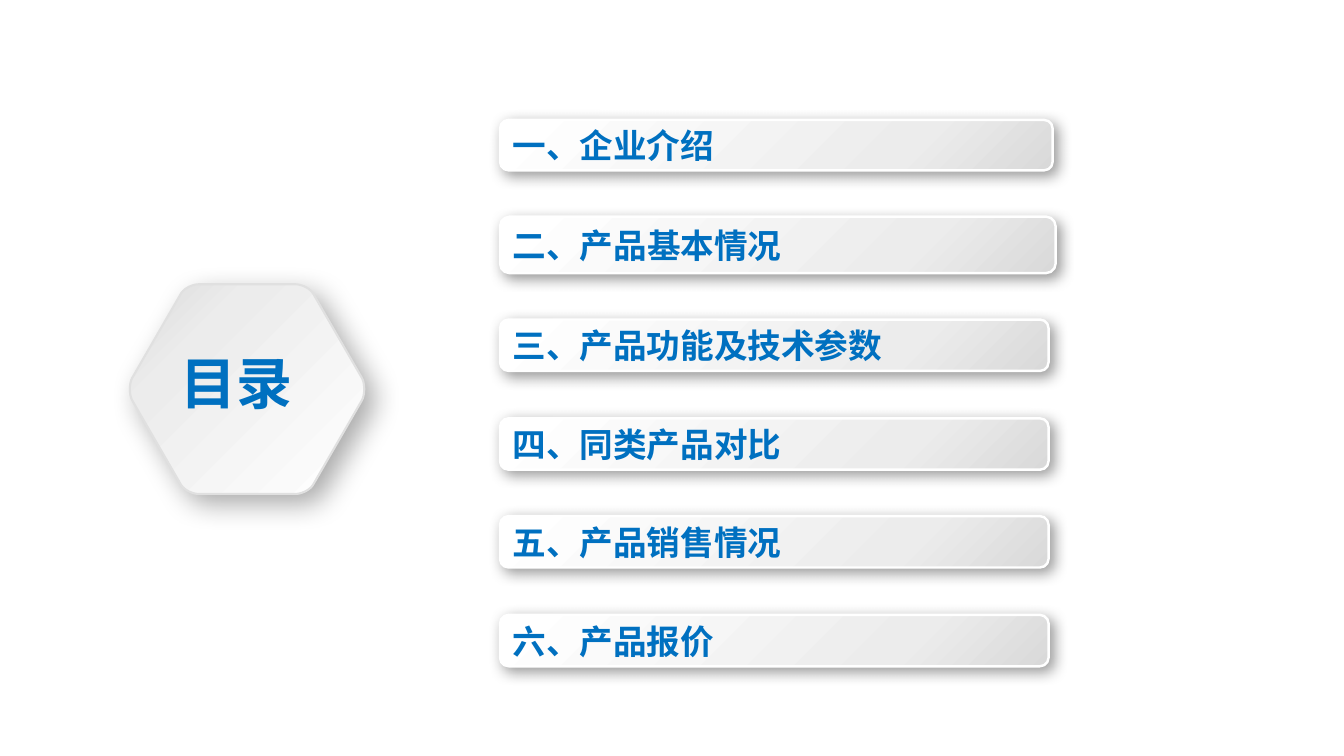
from dataclasses import dataclass

import lxml.etree
import pptx
import pptx.dml.color
import pptx.enum.shapes
import pptx.enum.text
import pptx.oxml
import pptx.oxml.ns
import pptx.util
from copy import deepcopy
from pptx.util import Inches

COLORS = {
    "blue": "0070C0",
    "white": "FFFFFF",
    "light": "ECECEC",
    "grey": "D9D9D9",
    "edge": "E0E0E0",
    "shadow": "000000",
}
FONT = "Noto Sans CJK SC"
BAR_LEFT = 4.96
HEXAGON_CENTER = (2.45, 3.86)
TOP_CORNER = [(0.48, -1.04), (0.54, -1.04), (0.63, -1.0), (0.66, -0.94)]
SIDE_CORNER = [(1.14, -0.11), (1.17, -0.05), (1.17, 0.05), (1.14, 0.11)]
CURVE_STEPS = 10

Point = tuple[float, float]


@dataclass
class Bar:
    text: str
    top: float
    width: float = 5.44
    height: float = 0.51


@dataclass
class Shadow:
    blur: float
    distance: float
    opacity: int


BARS = [
    Bar("一、企业介绍", 1.19, 5.48, 0.5),
    Bar("二、产品基本情况", 2.15, 5.51, 0.56),
    Bar("三、产品功能及技术参数", 3.17),
    Bar("四、同类产品对比", 4.15),
    Bar("五、产品销售情况", 5.12),
    Bar("六、产品报价", 6.1),
]
BAR_SHADOW = Shadow(10, 4, 40)
HEXAGON_SHADOW = Shadow(20, 9, 32)


def rgb(name: str) -> pptx.dml.color.RGBColor:
    return pptx.dml.color.RGBColor.from_string(COLORS[name])


def write_text(shape, text: str, *, size: float, color: str = "blue", align: str = "LEFT") -> None:
    frame = shape.text_frame
    frame.word_wrap = True
    frame.auto_size = pptx.enum.text.MSO_AUTO_SIZE.NONE
    frame.vertical_anchor = pptx.enum.text.MSO_ANCHOR.MIDDLE
    paragraph = frame.paragraphs[0]
    paragraph.alignment = getattr(pptx.enum.text.PP_ALIGN, align)
    run = paragraph.add_run()
    run.text = text
    run.font.size = pptx.util.Pt(size)
    run.font.bold = True
    run.font.name = FONT
    run.font.color.rgb = rgb(color)
    properties = run.font.color.rgb and run._r.get_or_add_rPr()
    lxml.etree.SubElement(properties, pptx.oxml.ns.qn("a:ea"), typeface=FONT)


def add_shadow(shape, shadow: Shadow) -> None:
    shape.shadow.inherit = False
    effects = shape.element.spPr.find(pptx.oxml.ns.qn("a:effectLst"))
    effects.append(pptx.oxml.parse_xml(
        f'<a:outerShdw {pptx.oxml.ns.nsdecls("a")} blurRad="{pptx.util.Pt(shadow.blur)}" '
        f'dist="{pptx.util.Pt(shadow.distance)}" dir="2700000" algn="tl" rotWithShape="0">'
        f'<a:srgbClr val="{COLORS["shadow"]}"><a:alpha val="{shadow.opacity * 1000}"/>'
        f'</a:srgbClr></a:outerShdw>'
    ))


def style_panel(shape, *, start: float, line: str, line_width: float, shadow: Shadow) -> None:
    shape.fill.gradient()
    shape.fill.gradient_angle = 315
    stop_list = shape.element.spPr.find(".//" + pptx.oxml.ns.qn("a:gsLst"))
    stop_list.append(deepcopy(stop_list[-1]))
    stops = [(start, "white"), (0.73, "light"), (1, "grey")]
    for stop, (position, color) in zip(shape.fill.gradient_stops, stops):
        stop.position = position
        stop.color.rgb = rgb(color)
    shape.line.color.rgb = rgb(line)
    shape.line.width = pptx.util.Pt(line_width)
    add_shadow(shape, shadow)


def curve_points(controls: list[Point]) -> list[Point]:
    points = []
    for step in range(CURVE_STEPS + 1):
        t = step / CURVE_STEPS
        weights = ((1 - t) ** 3, 3 * t * (1 - t) ** 2, 3 * t**2 * (1 - t), t**3)
        points.append(tuple(
            sum(weight * control[axis] for weight, control in zip(weights, controls))
            for axis in (0, 1)
        ))
    return points


def add_hexagon(slide):
    bottom_corner = [(x, -y) for x, y in reversed(TOP_CORNER)]
    right_half = [
        point
        for corner in (TOP_CORNER, SIDE_CORNER, bottom_corner)
        for point in curve_points(corner)
    ]
    outline = right_half + [(-x, -y) for x, y in right_half]
    center_x, center_y = HEXAGON_CENTER
    points = [(Inches(center_x + x), Inches(center_y + y)) for x, y in outline]
    builder = slide.shapes.build_freeform(*points[0])
    builder.add_line_segments(points[1:], close=True)
    hexagon = builder.convert_to_shape()
    hexagon.rotation = 180
    style_panel(hexagon, start=0, line="edge", line_width=1.5, shadow=HEXAGON_SHADOW)
    return hexagon


def add_bar(slide, bar: Bar) -> None:
    shape = slide.shapes.add_shape(
        pptx.enum.shapes.MSO_SHAPE.ROUNDED_RECTANGLE,
        Inches(BAR_LEFT), Inches(bar.top), Inches(bar.width), Inches(bar.height),
    )
    style_panel(shape, start=0.03, line="white", line_width=1.75, shadow=BAR_SHADOW)
    write_text(shape, bar.text, size=24)


def main() -> None:
    presentation = pptx.Presentation()
    presentation.slide_width = Inches(13.33)
    presentation.slide_height = Inches(7.5)
    slide = presentation.slides.add_slide(presentation.slide_layouts[5])
    hexagon = add_hexagon(slide)
    title = slide.shapes.title
    title.left, title.top = Inches(1.37), Inches(3.41)
    title.width, title.height = Inches(1.96), Inches(0.77)
    write_text(title, "目录", size=40, align="CENTER")
    hexagon.element.addnext(title.element)
    for bar in BARS:
        add_bar(slide, bar)
    presentation.save("out.pptx")


if __name__ == "__main__":
    main()
